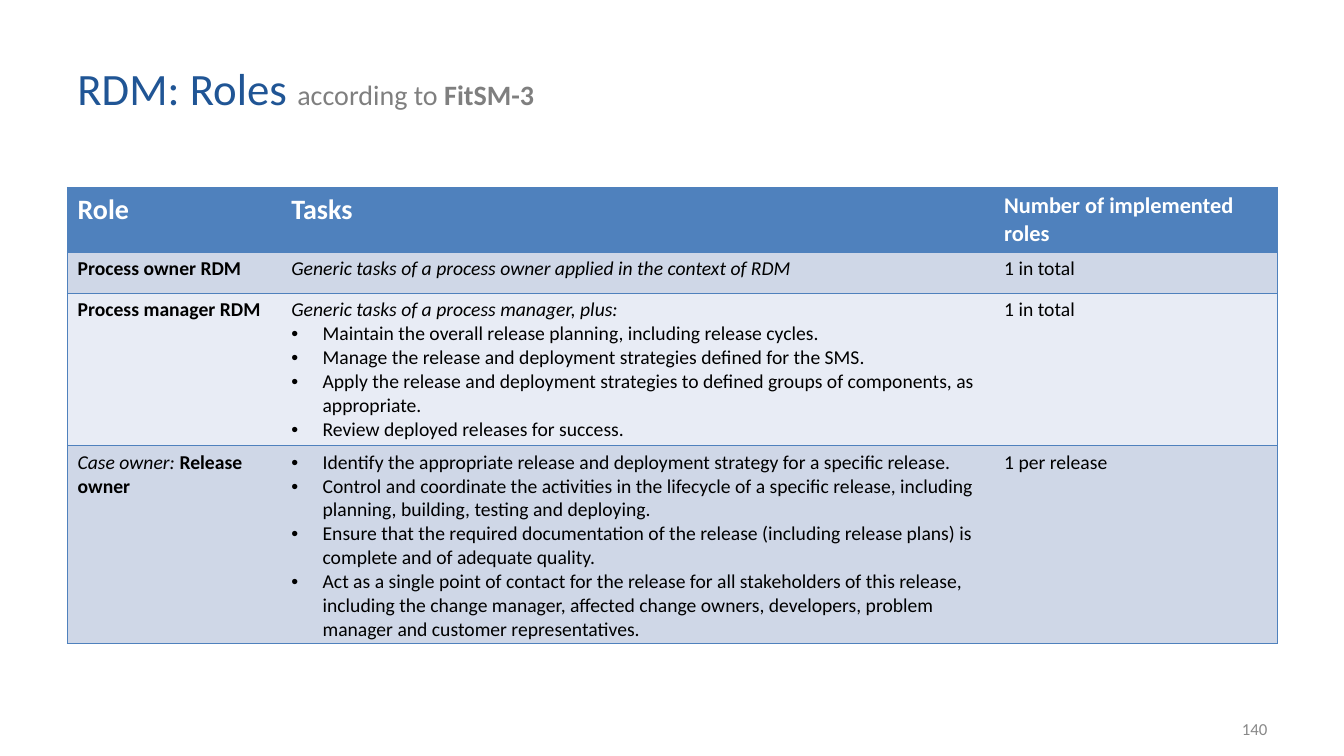
import pptx
import pptx.util
import pptx.dml.color
import pptx.enum.text
import pptx.oxml
import pptx.oxml.ns

PX = 9144  # EMU; 100 px to the inch
BLUE, BLACK, WHITE = "4F81BD", "000000", "FFFFFF"
BANDS = ["CFD7E7", "E8ECF5"]
COLUMNS = [212, 707, 281]
ROWS = [64, 41, 151, 195]
BORDER = 0.96
BULLET_INDENT = 31

BODY = {"size": 14, "color": BLACK}
BOLD = {**BODY, "bold": True}
ITALIC = {**BODY, "italic": True}
HEAD = {"size": 20, "color": WHITE, "bold": True}
SMALL_HEAD = {**HEAD, "size": 16}

MANAGER_TASKS = [
    "Maintain the overall release planning, including release cycles.",
    "Manage the release and deployment strategies defined for the SMS.",
    "Apply the release and deployment strategies to defined groups of components, as appropriate.",
    "Review deployed releases for success.",
]
OWNER_TASKS = [
    "Identify the appropriate release and deployment strategy for a specific release.",
    "Control and coordinate the activities in the lifecycle of a specific release, including "
    "planning, building, testing and deploying.",
    "Ensure that the required documentation of the release (including release plans) is "
    "complete and of adequate quality.",
    "Act as a single point of contact for the release for all stakeholders of this release, "
    "including the change manager, affected change owners, developers, problem manager and "
    "customer representatives.",
]


def px(n):
    return pptx.util.Emu(n * PX)


def rgb(value):
    return pptx.dml.color.RGBColor.from_string(value)


def line(*runs):
    """A plain paragraph made of (text, format) runs."""
    return {"runs": runs, "bullet": False}


def bullets(texts):
    return [{"runs": [(text, BODY)], "bullet": True} for text in texts]


def add_bullet(p):
    pPr = p._p.get_or_add_pPr()
    pPr.set("marL", str(px(BULLET_INDENT)))
    pPr.set("indent", str(px(-BULLET_INDENT)))
    ns = pptx.oxml.ns.nsdecls("a")
    pPr.append(pptx.oxml.parse_xml(f'<a:buFont {ns} typeface="Arial"/>'))
    pPr.append(pptx.oxml.parse_xml(f'<a:buChar {ns} char="•"/>'))


def write(tf, paragraphs, align=pptx.enum.text.PP_ALIGN.LEFT):
    tf.word_wrap = True
    for i, content in enumerate(paragraphs):
        p = tf.add_paragraph() if i else tf.paragraphs[0]
        p.alignment = align
        if content["bullet"]:
            add_bullet(p)
        for text, fmt in content["runs"]:
            r = p.add_run()
            r.text = text
            font = {"name": "Calibri", "bold": False, "italic": False, **fmt}
            r.font.color.rgb = rgb(font.pop("color"))
            font["size"] = pptx.util.Pt(font["size"])
            for name, value in font.items():
                setattr(r.font, name, value)


def add_text(s, box, paragraph, align=pptx.enum.text.PP_ALIGN.LEFT):
    tf = s.shapes.add_textbox(*map(px, box)).text_frame
    tf.vertical_anchor = pptx.enum.text.MSO_ANCHOR.MIDDLE
    write(tf, [paragraph], align)


def set_borders(cell, sides):
    """Draw the named sides (of L, R, T, B) and clear the others."""
    tcPr = cell._tc.get_or_add_tcPr()
    ns = pptx.oxml.ns.nsdecls("a")
    for side in "LRTB":
        paint = "<a:noFill/>"
        if side in sides:
            paint = f'<a:solidFill><a:srgbClr val="{BLUE}"/></a:solidFill>'
        width = pptx.util.Pt(BORDER)
        tcPr.append(pptx.oxml.parse_xml(f'<a:ln{side} {ns} w="{width}">{paint}</a:ln{side}>'))


def add_roles_table(s, left, top, rows):
    box = map(px, (left, top, sum(COLUMNS), sum(ROWS)))
    table = s.shapes.add_table(len(ROWS), len(COLUMNS), *box).table
    table.first_row = table.horz_banding = False
    for column, width in zip(table.columns, COLUMNS):
        column.width = px(width)
    for i, (row, height) in enumerate(zip(table.rows, ROWS)):
        row.height = px(height)
        for cell, sides, content in zip(row.cells, ("LTB", "TB", "RTB"), rows[i]):
            set_borders(cell, sides)
            cell.fill.solid()
            cell.fill.fore_color.rgb = rgb(BANDS[(i - 1) % 2] if i else BLUE)
            write(cell.text_frame, content)


def main():
    prs = pptx.Presentation()
    prs.slide_width, prs.slide_height = px(1333), px(750)
    s = prs.slides.add_slide(prs.slide_layouts[6])

    subtitle = {"size": 20, "color": "7F7F7F"}
    add_text(s, (67, 30, 990, 114), line(
        ("RDM: Roles ", {"size": 32, "color": "205595"}),
        ("according to ", subtitle),
        ("FitSM-3", {**subtitle, "bold": True})))

    add_roles_table(s, 67, 186, [
        [[line(("Role", HEAD))],
         [line(("Tasks", HEAD))],
         [line(("Number of implemented roles", SMALL_HEAD))]],
        [[line(("Process owner RDM", BOLD))],
         [line(("Generic tasks of a process owner applied in the context of RDM", ITALIC))],
         [line(("1 in total", BODY))]],
        [[line(("Process manager RDM", BOLD))],
         [line(("Generic tasks of a process manager, plus:", ITALIC)), *bullets(MANAGER_TASKS)],
         [line(("1 in total", BODY))]],
        [[line(("Case owner: ", ITALIC), ("Release owner", BOLD))],
         bullets(OWNER_TASKS),
         [line(("1 per release", BODY))]],
    ])

    add_text(s, (956, 703, 311, 40), line(("140", {"size": 12, "color": "888888"})),
             pptx.enum.text.PP_ALIGN.RIGHT)
    prs.save("out.pptx")


if __name__ == "__main__":
    main()
